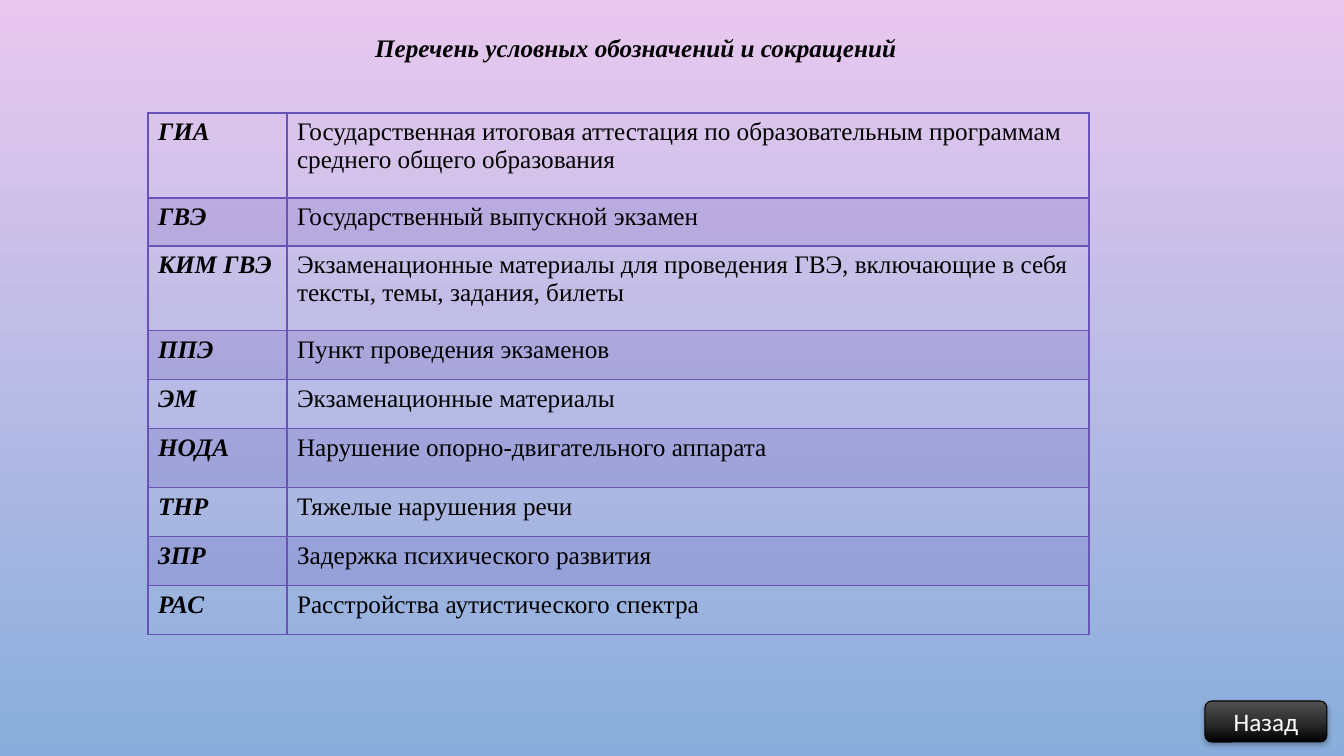
from copy import deepcopy

from lxml import etree
from pptx import Presentation
from pptx.dml.color import RGBColor
from pptx.enum.shapes import MSO_SHAPE
from pptx.enum.text import MSO_ANCHOR, MSO_AUTO_SIZE, PP_ALIGN
from pptx.oxml.ns import qn
from pptx.util import Emu, Pt

ROUNDED = MSO_SHAPE.ROUNDED_RECTANGLE
TOP, MIDDLE = MSO_ANCHOR.TOP, MSO_ANCHOR.MIDDLE
GROW = MSO_AUTO_SIZE.SHAPE_TO_FIT_TEXT
CENTER, JUSTIFY = PP_ALIGN.CENTER, PP_ALIGN.JUSTIFY

BLACK = RGBColor(0x00, 0x00, 0x00)
WHITE = RGBColor(0xFF, 0xFF, 0xFF)
CHARCOAL = RGBColor(0x2F, 0x2F, 0x2F)
GREY = RGBColor(0x51, 0x51, 0x51)
VIOLET = RGBColor(0x69, 0x53, 0xB7)
PINK = RGBColor(0xE9, 0xC8, 0xEF)
BLUE = RGBColor(0x89, 0xAE, 0xDB)

PX_PER_INCH = 100.8
BODY = dict(name="Times New Roman", size=Pt(18), bold=False, italic=False)
TERM = {**BODY, "bold": True, "italic": True}
BUTTON = dict(name="Calibri", size=Pt(18))

ABBREVIATIONS = [
    ("ГИА", "Государственная итоговая аттестация по образовательным программам "
            "среднего общего образования", 85),
    ("ГВЭ", "Государственный выпускной экзамен", 48),
    ("КИМ ГВЭ", "Экзаменационные материалы для проведения ГВЭ, включающие в себя "
                "тексты, темы, задания, билеты", 85),
    ("ППЭ", "Пункт проведения экзаменов", 49),
    ("ЭМ", "Экзаменационные материалы", 49),
    ("НОДА", "Нарушение опорно-двигательного аппарата", 59),
    ("ТНР", "Тяжелые нарушения речи", 49),
    ("ЗПР", "Задержка психического развития", 49),
    ("РАС", "Расстройства аутистического спектра", 49),
]
COLUMN_WIDTHS = (139, 802)


def px(length):
    return Emu(round(length * 914400 / PX_PER_INCH))


def write(text_frame, text, style, color):
    paragraph = text_frame.paragraphs[0]
    run = paragraph.add_run()
    run.text = text
    for attribute, value in style.items():
        setattr(run.font, attribute, value)
    run.font.color.rgb = color
    return paragraph


def paint_gradient(fill, owner, colors):
    """Fill from top to bottom with evenly spaced colours; owner is the XML parent."""
    fill.gradient()
    fill.gradient_angle = 270
    stop_list = next(owner.iter(qn("a:gsLst")))
    for _ in colors[2:]:
        stop_list.append(deepcopy(stop_list[-1]))
    for index, (stop, color) in enumerate(zip(fill.gradient_stops, colors)):
        stop.position = index / (len(colors) - 1)
        stop.color.rgb = color


def add_color(parent, color, alpha):
    color_element = etree.SubElement(parent, qn("a:srgbClr"), val=str(color))
    etree.SubElement(color_element, qn("a:alpha"), val=str(alpha * 1000))


def tint(cell, color, alpha):
    cell.fill.solid()
    cell.fill.fore_color.rgb = color
    solid = cell.fill._xPr.find(qn("a:solidFill"))
    solid.remove(solid[0])
    add_color(solid, color, alpha)


def add_borders(cell, bottom_width):
    properties = cell._tc.get_or_add_tcPr()
    widths = {"lnL": 1, "lnR": 1, "lnT": 1, "lnB": bottom_width}
    for index, (side, width) in enumerate(widths.items()):
        border = etree.Element(qn(f"a:{side}"), w=str(Pt(width)))
        solid = etree.SubElement(border, qn("a:solidFill"))
        add_color(solid, VIOLET, 100)
        properties.insert(index, border)


def add_title(slide, text):
    title = slide.shapes.title
    title.left, title.top, title.width, title.height = map(px, (365, 12, 584, 56))
    frame = title.text_frame
    frame.word_wrap = True
    frame.auto_size = GROW
    frame.vertical_anchor = TOP
    paragraph = write(frame, text, TERM, BLACK)
    paragraph.alignment = JUSTIFY
    paragraph.line_spacing = 1.5


def add_abbreviation_table(slide):
    height = sum(row_height for _, _, row_height in ABBREVIATIONS)
    table = slide.shapes.add_table(
        len(ABBREVIATIONS), len(COLUMN_WIDTHS),
        px(148), px(113), px(sum(COLUMN_WIDTHS)), px(height)).table
    table.first_row = table.horz_banding = False
    for column, width in zip(table.columns, COLUMN_WIDTHS):
        column.width = px(width)
    for index, (term, meaning, row_height) in enumerate(ABBREVIATIONS):
        row = table.rows[index]
        row.height = px(row_height)
        for cell, text, style in zip(row.cells, (term, meaning), (TERM, BODY)):
            write(cell.text_frame, text, style, BLACK)
            if index % 2:
                tint(cell, VIOLET, 20)
            else:
                cell.fill.background()
            add_borders(cell, bottom_width=1 if index else 2)


def add_button(slide, text):
    button = slide.shapes.add_shape(ROUNDED, px(1205), px(701), px(122), px(41))
    properties = button._element.spPr
    paint_gradient(button.fill, properties, (GREY, CHARCOAL, BLACK))
    button.line.color.rgb = BLACK
    button.line.width = Pt(0.75)
    button.shadow.inherit = False
    shadow = etree.SubElement(
        properties.find(qn("a:effectLst")), qn("a:outerShdw"),
        blurRad=str(Pt(4)), dist=str(Pt(2)), dir="5400000", rotWithShape="0")
    add_color(shadow, BLACK, 28)
    button.text_frame.vertical_anchor = MIDDLE
    write(button.text_frame, text, BUTTON, WHITE).alignment = CENTER


def main():
    presentation = Presentation()
    presentation.slide_width, presentation.slide_height = px(1344), px(756)
    slide = presentation.slides.add_slide(presentation.slide_layouts[5])
    paint_gradient(slide.background.fill, slide._element, (PINK, BLUE))
    add_title(slide, "Перечень условных обозначений и сокращений")
    add_abbreviation_table(slide)
    add_button(slide, "Назад")
    presentation.save("out.pptx")


if __name__ == "__main__":
    main()
